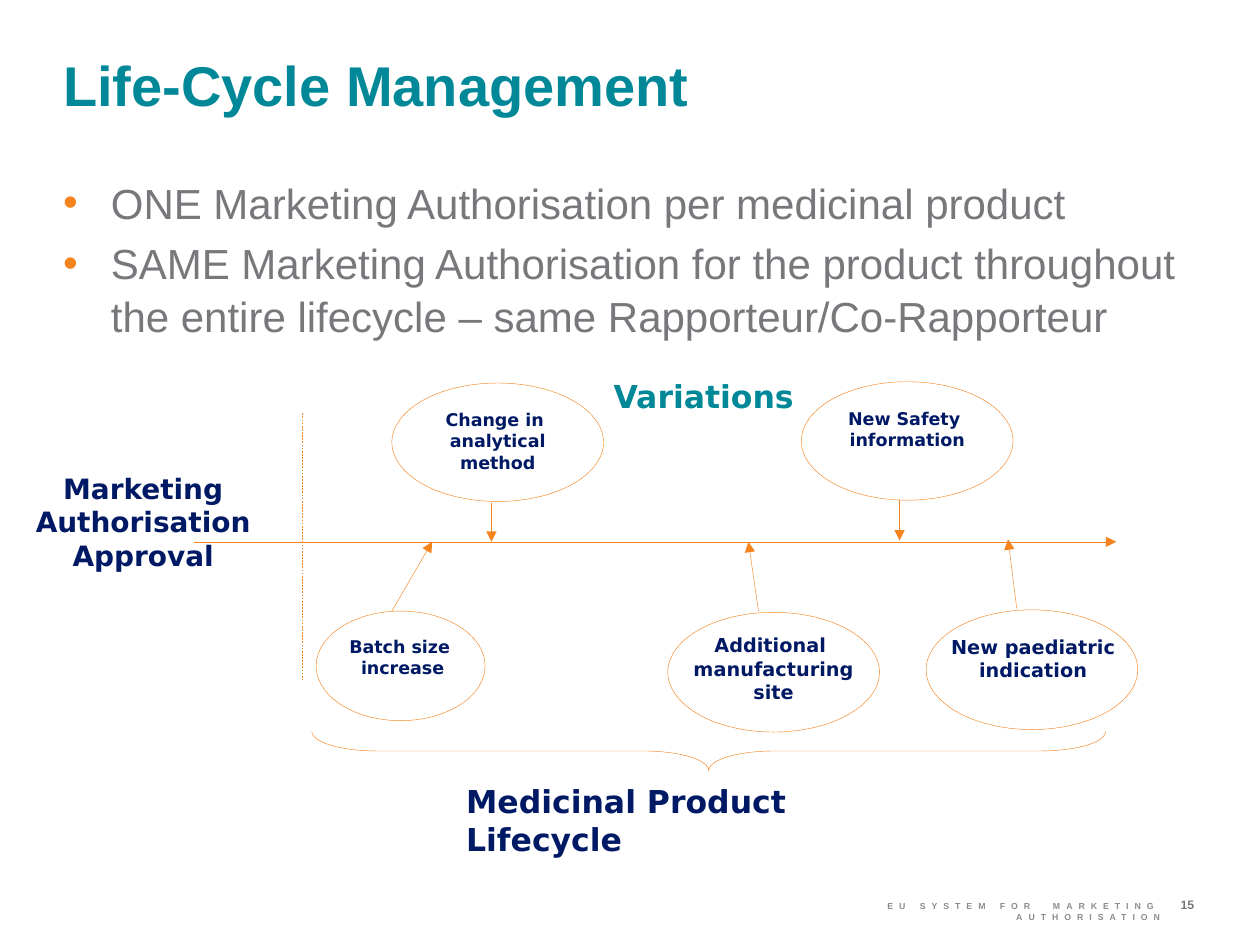
from lxml.etree import SubElement
from pptx import Presentation
from pptx.dml.color import RGBColor
from pptx.enum.dml import MSO_LINE
from pptx.enum.shapes import MSO_CONNECTOR, MSO_SHAPE
from pptx.enum.text import MSO_ANCHOR, PP_ALIGN
from pptx.oxml.ns import qn
from pptx.util import Inches, Pt

COLORS = {"teal": "008898", "grey": "77787B", "orange": "F5841F",
          "navy": "001965", "footer": "8C8C8C"}
TITLE = "Life-Cycle Management"
BULLETS = [
    "ONE Marketing Authorisation per medicinal product",
    "SAME Marketing Authorisation for the product throughout the entire "
    "lifecycle – same Rapporteur/Co-Rapporteur",
]
APPROVAL = ["Marketing ", "Authorisation ", "Approval "]
FOOTER = "EU SYSTEM FOR  MARKETING AUTHORISATION"
PAGE_NUMBER = "15"
TIMELINE = ((1.54, 4.3), (8.86, 4.3))
APPROVAL_MARK = ((2.4, 3.28), (2.4, 5.4))
VARIATIONS = [
    {"lines": ["Batch size ", "increase"], "oval": (2.51, 4.85, 1.34, 0.87),
     "label": (2.69, 4.97, 1.01, 0.49), "size": 10, "wrap": False,
     "arrow": ((3.11, 4.85), (3.43, 4.3))},
    {"lines": ["Change in ", "analytical method"], "oval": (3.11, 3.04, 1.68, 0.94),
     "label": (3.17, 3.17, 1.56, 0.5), "size": 10, "wrap": False,
     "arrow": ((3.9, 3.99), (3.9, 4.3))},
    {"lines": ["Additional ", "manufacturing site"], "oval": (5.3, 4.86, 1.68, 0.95),
     "label": (5.35, 4.95, 1.58, 0.71), "size": 11, "wrap": True,
     "arrow": ((6.02, 4.85), (5.94, 4.3))},
    {"lines": ["New paediatric indication"], "oval": (7.35, 4.84, 1.68, 0.95),
     "label": (7.43, 4.96, 1.54, 0.53), "size": 11, "wrap": True,
     "arrow": ((8.07, 4.83), (8, 4.28))},
    {"lines": ["New Safety ", "information"], "oval": (6.36, 3.03, 1.68, 0.94),
     "label": (6.65, 3.16, 1.1, 0.5), "size": 10, "wrap": False,
     "arrow": ((7.14, 3.97), (7.14, 4.29))},
]


def rgb(color):
    return RGBColor.from_string(COLORS[color])


def fill_text(holder, lines, size, color, font="DejaVu Sans", bold=True,
              align=PP_ALIGN.LEFT, inset=0.08, wrap=True):
    frame = holder.text_frame
    frame.word_wrap = wrap
    frame.vertical_anchor = MSO_ANCHOR.TOP
    frame.margin_left = frame.margin_right = Inches(inset)
    frame.margin_top = frame.margin_bottom = Inches(inset)
    frame.text = "\n".join(lines)
    for paragraph in frame.paragraphs:
        paragraph.alignment = align
        paragraph.font.name = font
        paragraph.font.size = Pt(size)
        paragraph.font.bold = bold
        paragraph.font.color.rgb = rgb(color)
    return frame


def add_text(slide, box, lines, size, color, **style):
    holder = slide.shapes.add_textbox(*map(Inches, box))
    return fill_text(holder, lines, size, color, **style)


def add_bullet(paragraph):
    properties = paragraph._p.get_or_add_pPr()
    properties.set("marL", str(Inches(0.38)))
    properties.set("indent", str(-Inches(0.38)))
    bullet_color = SubElement(properties, qn("a:buClr"))
    SubElement(bullet_color, qn("a:srgbClr"), val=COLORS["orange"])
    SubElement(properties, qn("a:buFont"), typeface="Arial")
    SubElement(properties, qn("a:buChar"), char="•")
    default_font = properties.find(qn("a:defRPr"))
    properties.append(default_font)


def style_line(line):
    line.color.rgb = rgb("orange")
    line.width = Pt(0.25)


def add_line(slide, ends, arrow=True):
    (x1, y1), (x2, y2) = ends
    connector = slide.shapes.add_connector(
        MSO_CONNECTOR.STRAIGHT, Inches(x1), Inches(y1), Inches(x2), Inches(y2))
    style_line(connector.line)
    if arrow:
        SubElement(connector.line._get_or_add_ln(), qn("a:tailEnd"), type="triangle")
    else:
        connector.line.dash_style = MSO_LINE.DASH
    SubElement(connector._element.spPr, qn("a:effectLst"))


def add_outline(slide, kind, box):
    outline = slide.shapes.add_shape(kind, *map(Inches, box))
    outline.shadow.inherit = False
    outline.fill.background()
    style_line(outline.line)
    return outline


def main():
    """Build the life-cycle management slide."""
    deck = Presentation()
    deck.slide_width, deck.slide_height = Inches(10), Inches(7.5)
    slide = deck.slides.add_slide(deck.slide_layouts[5])

    title = slide.shapes.title
    title.left, title.top, title.width, title.height = map(Inches, (0.5, 0.36, 9, 0.72))
    heading = fill_text(title, [TITLE], 32, "teal", font="Arial", inset=0)
    heading.margin_top = Inches(0.04)

    body = add_text(slide, (0.5, 1.39, 8.92, 5.28), BULLETS, 24, "grey",
                    font="Arial", bold=False, inset=0)
    for paragraph in body.paragraphs:
        paragraph.line_spacing = 1.04
        paragraph.space_before = Pt(4.8)
        add_bullet(paragraph)

    add_text(slide, (0.2, 3.66, 1.95, 1.24), APPROVAL, 16, "navy",
             align=PP_ALIGN.CENTER, wrap=False)
    add_line(slide, TIMELINE)
    add_line(slide, APPROVAL_MARK, arrow=False)

    for variation in VARIATIONS:
        add_outline(slide, MSO_SHAPE.OVAL, variation["oval"])
        add_text(slide, variation["label"], variation["lines"], variation["size"],
                 "navy", align=PP_ALIGN.CENTER, wrap=variation["wrap"])
        add_line(slide, variation["arrow"])

    brace = add_outline(slide, MSO_SHAPE.LEFT_BRACE, (5.47, 2.81, 0.31, 6.3))
    brace.rotation = 270
    brace.adjustments[0] = 1.67
    add_text(slide, (3.62, 6.13, 3.9, 0.46), ["Medicinal Product Lifecycle"], 18, "navy")
    add_text(slide, (4.79, 2.91, 1.61, 0.46), ["Variations"], 18, "teal", wrap=False)

    footer = add_text(slide, (6.14, 7.15, 3.07, 0.16), [FOOTER], 5, "footer",
                      font="Arial", align=PP_ALIGN.RIGHT, inset=0)
    footer.paragraphs[0].runs[0].font._element.set("spc", "340")
    add_text(slide, (9.37, 7.12, 0.43, 0.17), [PAGE_NUMBER], 7, "grey",
             font="Arial", inset=0)
    deck.save("out.pptx")


if __name__ == "__main__":
    main()
